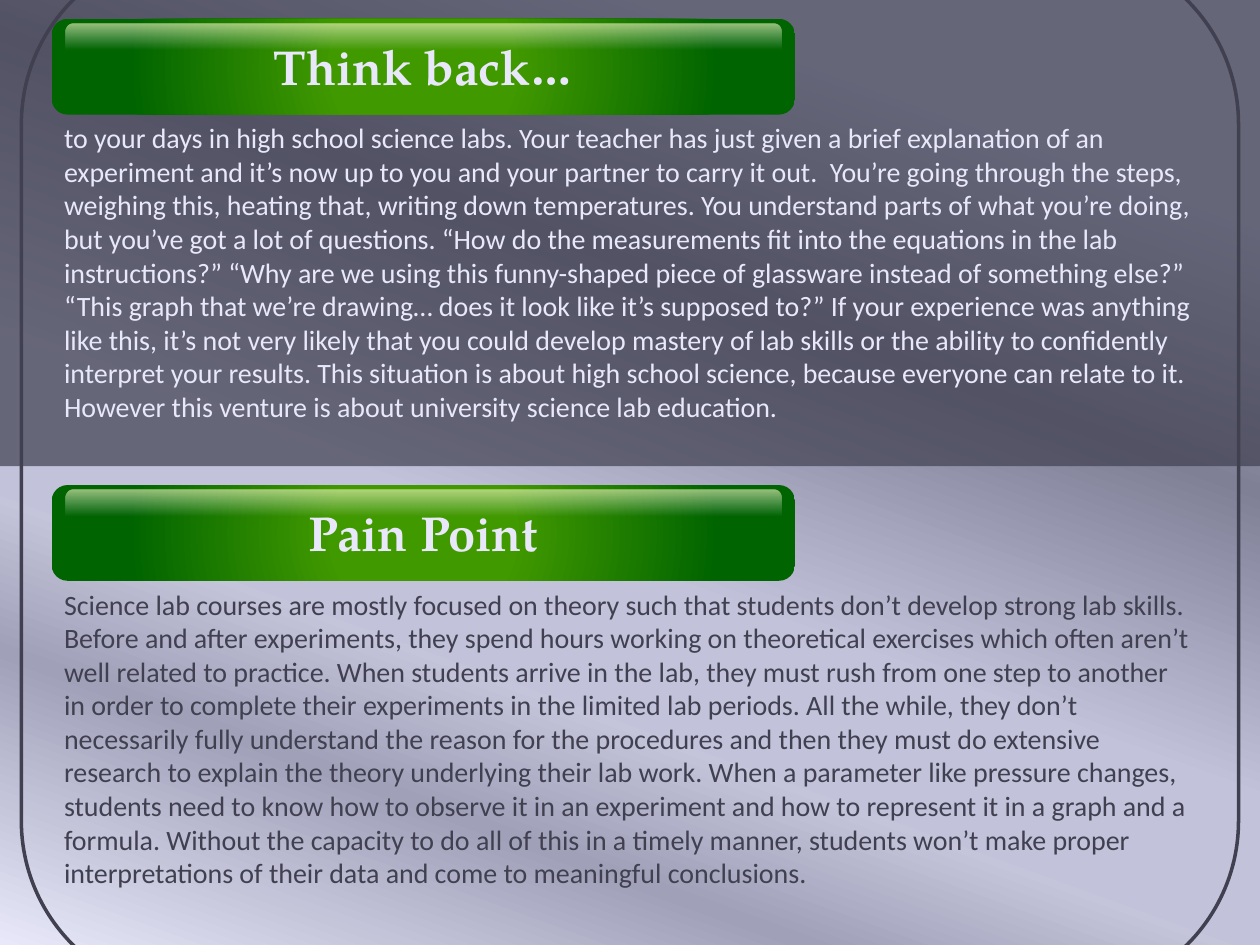
from lxml import etree
from pptx import Presentation
from pptx import util as u
from pptx.dml.color import RGBColor
from pptx.enum import shapes, text
from pptx.oxml import parse_xml
from pptx.oxml.ns import nsdecls, qn

WIDTH, HEIGHT = 10, 7.5
PANEL_HEIGHT = 3.7
DARK, LIGHT = "404050", "E8E8FA"
ROUND = shapes.MSO_SHAPE.ROUNDED_RECTANGLE

# Each story is a list of sentences, joined by a space
THINK_BACK = [
    "to your days in high school science labs.",
    "Your teacher has just given a brief explanation of an experiment and it’s now up "
    "to you and your partner to carry it out. ",
    "You’re going through the steps, weighing this, heating that, writing down "
    "temperatures.",
    "You understand parts of what you’re doing, but you’ve got a lot of questions.",
    "“How do the measurements fit into the equations in the lab instructions?”",
    "“Why are we using this funny-shaped piece of glassware instead of something else?”",
    "“This graph that we’re drawing… does it look like it’s supposed to?”",
    "If your experience was anything like this, it’s not very likely that you could "
    "develop mastery of lab skills or the ability to confidently interpret your results.",
    "This situation is about high school science, because everyone can relate to it.",
    "However this venture is about university science lab education.",
]
PAIN_POINT = [
    "Science lab courses are mostly focused on theory such that students don’t develop "
    "strong lab skills.",
    "Before and after experiments, they spend hours working on theoretical exercises "
    "which often aren’t well related to practice.",
    "When students arrive in the lab, they must rush from one step to another in order "
    "to complete their experiments in the limited lab periods.",
    "All the while, they don’t necessarily fully understand the reason for the "
    "procedures and then they must do extensive research to explain the theory "
    "underlying their lab work.",
    "When a parameter like pressure changes, students need to know how to observe it "
    "in an experiment and how to represent it in a graph and a formula.",
    "Without the capacity to do all of this in a timely manner, students won’t make "
    "proper interpretations of their data and come to meaningful conclusions.",
]


def color(value):
    return RGBColor.from_string(value)


def inches(*lengths):
    return [u.Inches(length) for length in lengths]


def set_gradient(owner, fill, stops, angle=None):
    """Stops are (percent, colour, opacity percent); no angle means radial."""
    fill.gradient()
    gradient = next(owner.element.iter(qn("a:gradFill")))
    marks = "".join(
        f'<a:gs pos="{pos * 1000}"><a:srgbClr val="{value}">'
        f'<a:alpha val="{opacity * 1000}"/></a:srgbClr></a:gs>'
        for pos, value, opacity in stops)
    if angle is None:
        shade = ('<a:path path="circle">'
                 '<a:fillToRect l="50000" t="50000" r="50000" b="50000"/></a:path>')
    else:
        shade = f'<a:lin ang="{angle * 60000}" scaled="0"/>'
    gradient.getparent().replace(gradient, parse_xml(
        f'<a:gradFill {nsdecls("a")} rotWithShape="1">'
        f"<a:gsLst>{marks}</a:gsLst>{shade}</a:gradFill>"))


def add_plain(parent, kind, *box):
    part = parent.add_shape(kind, *inches(*box))
    part.shadow.inherit = False
    part.line.fill.background()
    return part


def add_words(parent, words, box, font, size, ink, bold=False, align=None):
    frame = parent.add_textbox(*inches(*box)).text_frame
    frame.word_wrap = True
    frame.auto_size = text.MSO_AUTO_SIZE.SHAPE_TO_FIT_TEXT
    line = frame.paragraphs[0]
    line.text = words
    line.alignment = align
    line.font.name, line.font.size, line.font.bold = font, u.Pt(size), bold
    line.font.color.rgb = color(ink)


def draw_backdrop(slide):
    set_gradient(slide, slide.background.fill, [
        (16, "C0C0DC", 100), (35, "7F7F96", 100), (57, "C2C2DB", 100),
        (68, "C4C4DA", 100), (79, "A0A0B9", 100), (100, LIGHT, 100)], 110)

    # Rounded frame running past the top and bottom edges
    side, overhang = 0.17, 0.4
    frame = add_plain(slide.shapes, ROUND, side, -overhang,
                      WIDTH - 2 * side, HEIGHT + 2 * overhang)
    frame.fill.background()
    frame.line.color.rgb = color(DARK)
    frame.line.width = u.Pt(2)

    # Translucent band behind the upper panel
    band = add_plain(slide.shapes, shapes.MSO_SHAPE.RECTANGLE,
                     0, 0, WIDTH, PANEL_HEIGHT)
    band.fill.solid()
    band.fill.fore_color.rgb = color(DARK)
    tint = next(band.element.spPr.iter(qn("a:srgbClr")))
    etree.SubElement(tint, qn("a:alpha")).set("val", "70000")


def draw_banner(slide, title, left, top, width, height):
    banner = slide.shapes.add_group_shape().shapes
    plate = add_plain(banner, ROUND, left, top, width, height)
    set_gradient(plate, plate.fill, [(24, "419900", 100), (79, "006400", 100)])

    # Glossy highlight over the upper half
    inset = 0.11
    gloss = add_plain(banner, ROUND, left + inset, top + 0.04,
                      width - 2 * inset, height / 2)
    set_gradient(gloss, gloss.fill, [(0, "FFFFCC", 60), (55, "E1E8F5", 0)], 90)

    margin = 0.38
    add_words(banner, title, (left + margin, top + 0.09, width - 2 * margin, 0.57),
              "TeX Gyre Pagella", 28, LIGHT, True, text.PP_ALIGN.CENTER)


def draw_panel(slide, top, title, story, ink):
    left = 0.41
    add_words(slide.shapes, " ".join(story),
              (left, top + 0.91, WIDTH - 2 * left, 2.52), "Calibri", 16, ink)
    draw_banner(slide, title, left, top + 0.15, 5.9, 0.76)


def main():
    deck = Presentation()
    deck.slide_width, deck.slide_height = inches(WIDTH, HEIGHT)
    slide = deck.slides.add_slide(deck.slide_layouts[6])
    draw_backdrop(slide)
    panels = [("Think back…", THINK_BACK, LIGHT), ("Pain Point", PAIN_POINT, DARK)]
    for row, panel in enumerate(panels):
        draw_panel(slide, row * PANEL_HEIGHT, *panel)
    deck.save("out.pptx")


if __name__ == "__main__":
    main()
